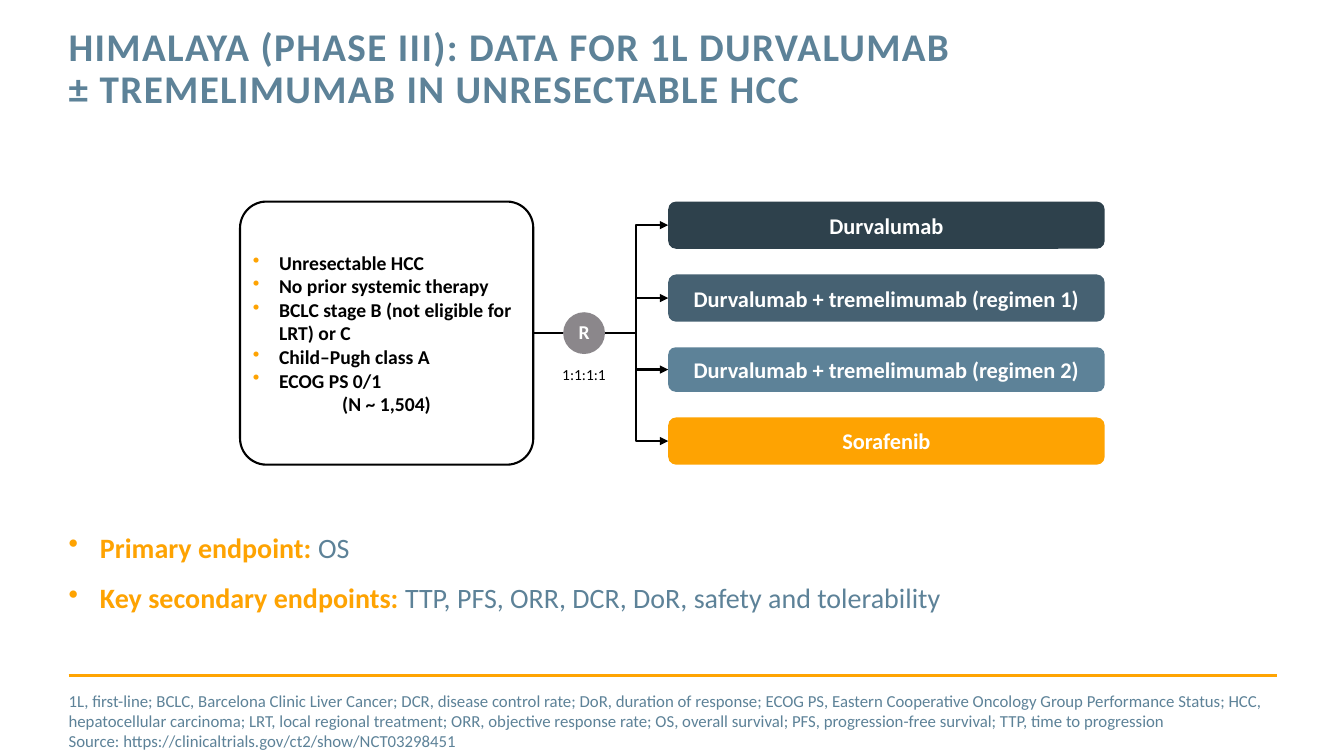
from lxml import etree
from pptx import Presentation
from pptx import util as u
from pptx.dml.color import RGBColor
from pptx.enum import shapes, text
from pptx.oxml import ns

Cm, Pt = u.Cm, u.Pt
SHAPE, LINK = shapes.MSO_SHAPE, shapes.MSO_CONNECTOR
MIDDLE, CENTER, LEFT = text.MSO_ANCHOR.MIDDLE, text.PP_ALIGN.CENTER, text.PP_ALIGN.LEFT
COLORS = {
    "orange": "FEA302", "rule": "FFA402", "steel": "5D8298", "slate": "466172",
    "navy": "2E414C", "grey": "8B878B", "black": "000000", "white": "FFFFFF",
}
MARGIN, FULL_WIDTH = 1.73, 30.45

TITLE = ["HIMALAYA (PHASE III): DATA FOR 1L DURVALUMAB ",
         "± TREMELIMUMAB IN UNRESECTABLE HCC"]
CRITERIA = ["Unresectable HCC", "No prior systemic therapy",
            "BCLC stage B (not eligible for LRT) or C", "Child–Pugh class A", "ECOG PS 0/1"]
PATIENTS = "(N ~ 1,504)"
ARMS = [  # label, colour, height
    ("Durvalumab", "navy", 1.19),
    ("Durvalumab + tremelimumab (regimen 1)", "slate", 1.19),
    ("Durvalumab + tremelimumab (regimen 2)", "steel", 1.12),
    ("Sorafenib", "orange", 1.19),
]
ENDPOINTS = [("Primary endpoint: ", "OS"),
             ("Key secondary endpoints: ", "TTP, PFS, ORR, DCR, DoR, safety and tolerability")]
FOOTNOTES = [
    "1L, first-line; BCLC, Barcelona Clinic Liver Cancer; DCR, disease control rate; "
    "DoR, duration of response; ECOG PS, Eastern Cooperative Oncology Group Performance Status; "
    "HCC, hepatocellular carcinoma; LRT, local regional treatment; ORR, objective response rate; "
    "OS, overall survival; PFS, progression-free survival; TTP, time to progression",
    "Source: https://clinicaltrials.gov/ct2/show/NCT03298451",
]


def rgb(name):
    return RGBColor.from_string(COLORS[name])


def apply(obj, **values):
    for name, value in values.items():
        setattr(obj, name, value)


def set_frame(tf, inset=0.0, **values):
    margins = {f"margin_{side}": Cm(inset) for side in ("left", "top", "right", "bottom")}
    apply(tf, **{"word_wrap": True, **margins, **values})


def paragraph(tf, index):
    return tf.paragraphs[0] if index == 0 else tf.add_paragraph()


def add_run(p, words, size, color, bold=False):
    r = p.add_run()
    r.text = words
    apply(r.font, name="Calibri", size=Pt(size), bold=bold)
    r.font.color.rgb = rgb(color)
    return r


def add_bullet(p, indent):
    """Give the paragraph an orange bullet with a hanging indent in cm."""
    pPr = p._p.get_or_add_pPr()
    pPr.set("marL", str(Cm(indent)))
    pPr.set("indent", str(-Cm(indent)))
    color = etree.SubElement(pPr, ns.qn("a:buClr"))
    etree.SubElement(color, ns.qn("a:srgbClr"), val=COLORS["orange"])
    etree.SubElement(pPr, ns.qn("a:buChar"), char="•")


def add_box(s, kind, box, fill, line=None):
    sp = s.shapes.add_shape(kind, *map(Cm, box))
    sp.shadow.inherit = False
    sp.fill.solid()
    sp.fill.fore_color.rgb = rgb(fill)
    if line:
        sp.line.color.rgb = rgb(line)
        sp.line.width = Pt(1.5)
    else:
        sp.line.fill.background()
    return sp


def add_line(s, kind, ends, color="black", width=1.5, arrow=False):
    cx = s.shapes.add_connector(kind, *map(Cm, ends))
    cx.line.color.rgb = rgb(color)
    cx.line.width = Pt(width)
    if arrow:
        etree.SubElement(cx.line._get_or_add_ln(), ns.qn("a:tailEnd"), type="triangle")
    etree.SubElement(cx._element.spPr, ns.qn("a:effectLst"))
    return cx


def add_title(s, left, top, width, height):
    sp = s.shapes.title
    apply(sp, left=Cm(left), top=Cm(top), width=Cm(width), height=Cm(height))
    tf = sp.text_frame
    set_frame(tf, vertical_anchor=text.MSO_ANCHOR.TOP, auto_size=text.MSO_AUTO_SIZE.NONE)
    p = tf.paragraphs[0]
    apply(p, alignment=LEFT, line_spacing=Pt(30))
    for i, words in enumerate(TITLE):
        if i:
            p.add_line_break()
        r = add_run(p, words, 28, "steel", True)
        r.font._element.set("spc", "100")


def add_criteria(s, *box):
    sp = add_box(s, SHAPE.ROUNDED_RECTANGLE, box, "white", "black")
    sp.adjustments[0] = 0.1
    tf = sp.text_frame
    set_frame(tf, 0.13, vertical_anchor=MIDDLE)
    for i, words in enumerate(CRITERIA):
        p = paragraph(tf, i)
        p.alignment = LEFT
        add_bullet(p, 0.66)
        add_run(p, words, 14, "black", True)
    p = tf.add_paragraph()
    p.alignment = CENTER
    add_run(p, PATIENTS, 14, "black", True)


def add_randomisation(s, left, middle, size):
    top = middle - size / 2
    sp = add_box(s, SHAPE.OVAL, (left, top, size, size), "grey", "grey")
    tf = sp.text_frame
    set_frame(tf, word_wrap=False, vertical_anchor=MIDDLE)
    p = tf.paragraphs[0]
    apply(p, alignment=CENTER, line_spacing=0.95)
    add_run(p, "R", 14, "white", True)

    width = 1.63
    ratio = s.shapes.add_textbox(Cm(left + size / 2 - width / 2), Cm(top + size + 0.17),
                                 Cm(width), Cm(0.74))
    apply(ratio.text_frame, word_wrap=False, auto_size=text.MSO_AUTO_SIZE.SHAPE_TO_FIT_TEXT)
    p = ratio.text_frame.paragraphs[0]
    p.alignment = CENTER
    add_run(p, "1:1:1:1", 11, "black")


def add_arms(s, left, top, width, height, start):
    """Stack the arms with equal gaps, each fed by an arrow from start (x, y)."""
    gap = (height - sum(arm[2] for arm in ARMS)) / (len(ARMS) - 1)
    for words, color, arm_height in ARMS:
        sp = add_box(s, SHAPE.ROUNDED_RECTANGLE, (left, top, width, arm_height), color)
        set_frame(sp.text_frame, 0.13, vertical_anchor=MIDDLE)
        p = sp.text_frame.paragraphs[0]
        p.alignment = CENTER
        add_run(p, words, 16, "white", True)
        add_line(s, LINK.ELBOW, (*start, left, top + arm_height / 2), arrow=True)
        top += arm_height + gap


def add_trial_design(s, left, top, width, height):
    criteria_width, arms_width, circle = 7.39, 11, 1
    middle = top + height / 2
    criteria_right = left + criteria_width
    circle_left = criteria_right + 0.78
    add_criteria(s, left, top, criteria_width, height)
    add_line(s, LINK.STRAIGHT, (criteria_right, middle, circle_left, middle))
    add_arms(s, left + width - arms_width, top, arms_width, height,
             (circle_left + circle, middle))
    add_randomisation(s, circle_left, middle, circle)


def add_endpoints(s, *box):
    tf = s.shapes.add_textbox(*map(Cm, box)).text_frame
    set_frame(tf)
    for i, (label, measures) in enumerate(ENDPOINTS):
        p = paragraph(tf, i)
        add_bullet(p, 0.79)
        p.space_before = Pt(12 if i else 0)
        add_run(p, label, 20, "orange", True)
        add_run(p, measures, 20, "steel")


def add_footer(s, left, top, width, height):
    add_line(s, LINK.STRAIGHT, (left, top, left + width, top), "rule", 2)
    gap = 0.63
    tf = s.shapes.add_textbox(Cm(left), Cm(top + gap), Cm(width), Cm(height - gap)).text_frame
    set_frame(tf, vertical_anchor=MIDDLE)
    for i, words in enumerate(FOOTNOTES):
        add_run(paragraph(tf, i), words, 12, "steel")


def main():
    prs = Presentation()
    apply(prs, slide_width=Cm(33.87), slide_height=Cm(19.05))
    s = prs.slides.add_slide(prs.slide_layouts[5])
    add_title(s, MARGIN, 0.69, 24.28, 2.24)
    add_trial_design(s, 6.05, 5.08, 21.79, 6.63)
    add_endpoints(s, MARGIN, 13.36, FULL_WIDTH, 2.59)
    add_footer(s, MARGIN, 17.02, FULL_WIDTH, 1.65)
    prs.save("out.pptx")


if __name__ == "__main__":
    main()
